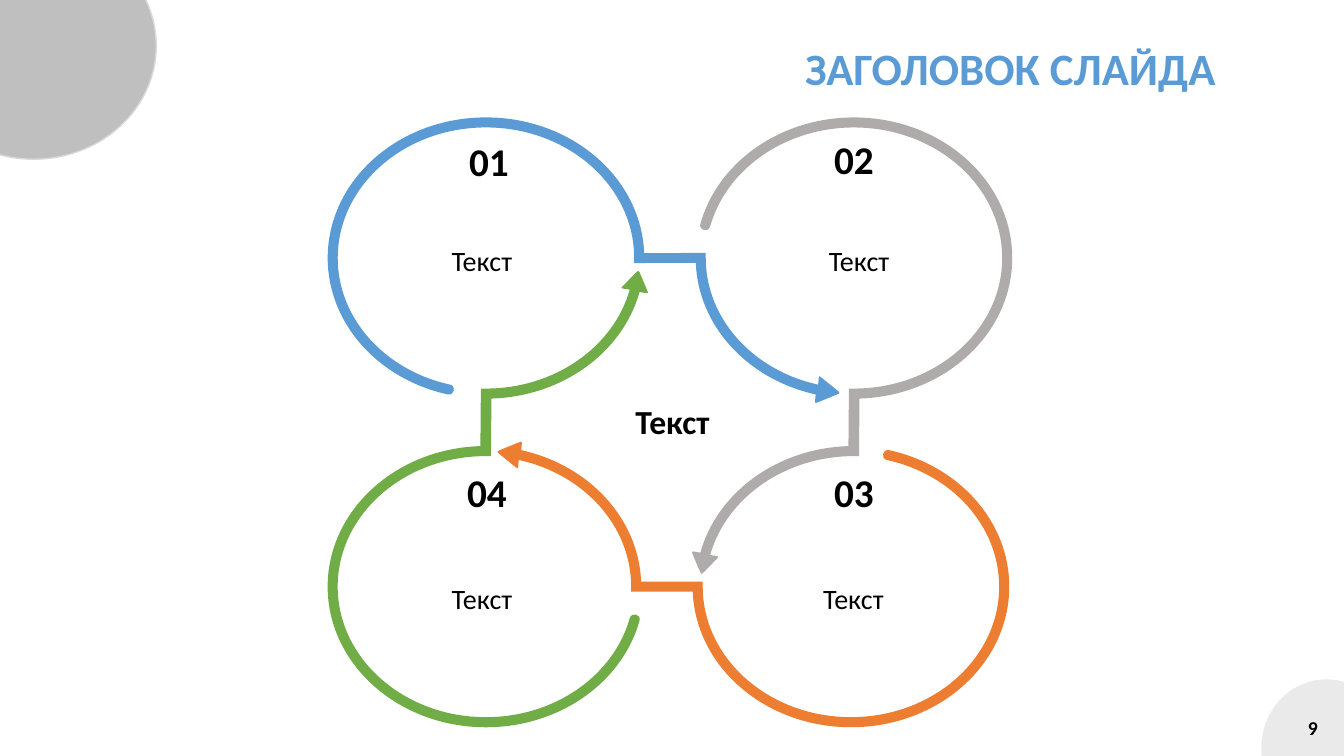
import math
import lxml.etree
import pptx
import pptx.dml.color
import pptx.enum.shapes
import pptx.enum.text
import pptx.oxml.ns
import pptx.util

Inches = pptx.util.Inches
Align = pptx.enum.text.PP_ALIGN
Anchor = pptx.enum.text.MSO_ANCHOR
Fit = pptx.enum.text.MSO_AUTO_SIZE
OVAL = pptx.enum.shapes.MSO_SHAPE.OVAL
qn = pptx.oxml.ns.qn

TITLE = "ЗАГОЛОВОК СЛАЙДА"
RINGS = [(4.82, 2.56), (8.47, 2.56), (8.47, 5.82), (4.82, 5.82)]
BANDS = [("5B9BD5", 0), ("AFABAB", 0), ("ED7D31", -0.03), ("70AD47", 0)]
RADII = (1.52, 1.345)
HALF = 0.05
WING = 0.14
NUMBERS = [
    ("01", (4.57, 1.31, 0.56, 0.57)),
    ("02", (8.19, 1.29, 0.56, 0.57)),
    ("04", (4.55, 4.59, 0.56, 0.57)),
    ("03", (8.19, 4.59, 0.56, 0.57)),
]
LABELS = [
    ("Текст", (3.36, 2.37, 2.84, 0.44), 20, False),
    ("Текст", (7.26, 2.37, 2.52, 0.44), 20, False),
    ("Текст", (4.89, 3.93, 3.56, 0.5), 24, True),
    ("Текст", (7.3, 5.72, 2.33, 0.44), 20, False),
    ("Текст", (3.29, 5.72, 2.98, 0.44), 20, False),
]
NUM_FRAME = {"margin_left": 0, "margin_right": 0, "vertical_anchor": Anchor.MIDDLE}
FIXED = {"vertical_anchor": Anchor.MIDDLE, "auto_size": Fit.NONE}


def rgb(code):
    return pptx.dml.color.RGBColor.from_string(code)


def assign(item, vals):
    for key, val in vals.items():
        setattr(item, key, val)


def paint(shape, code):
    shape.shadow.inherit = False
    shape.fill.solid()
    shape.fill.fore_color.rgb = rgb(code)
    shape.line.fill.background()


def write(shape, words, size, bold, align=Align.CENTER, code="000000", frame=None):
    box = shape.text_frame
    assign(box, {"word_wrap": True, "auto_size": Fit.SHAPE_TO_FIT_TEXT, **(frame or {})})
    line = box.paragraphs[0]
    line.alignment = align
    run = line.add_run()
    run.text = words
    assign(run.font, {"name": "Calibri", "size": pptx.util.Pt(size), "bold": bold})
    run.font.color.rgb = rgb(code)
    return line


def label(shapes, words, at, *args, **style):
    return write(shapes.add_textbox(*map(Inches, at)), words, *args, **style)


def disc(shapes, at, code):
    shape = shapes.add_shape(OVAL, *map(Inches, at))
    paint(shape, code)
    return shape


def spot(ring, deg, side=0):
    turn = math.radians(deg)
    return (ring[0] + (RADII[0] + side) * math.cos(turn),
            ring[1] + (RADII[1] + side) * math.sin(turn))


def slope(deg, side=0):
    turn = math.radians(deg)
    return (-(RADII[0] + side) * math.sin(turn), (RADII[1] + side) * math.cos(turn))


def shift(point, way, dist):
    return (point[0] + way[0] * dist, point[1] + way[1] * dist)


def unit(way):
    size = math.hypot(*way)
    return (way[0] / size, way[1] / size)


def arc(ring, side, *stops):
    curves = []
    for a, b in zip(stops, stops[1:]):
        pull = 4 / 3 * math.tan(math.radians(b - a) / 4)
        start, end = spot(ring, a, side), spot(ring, b, side)
        curves.append([shift(start, slope(a, side), pull),
                       shift(end, slope(b, side), -pull), end])
    return curves


def corner(ring, deg):
    return [shift(spot(ring, deg, -HALF), unit(slope(deg)), HALF)]


def mix(a, b, part):
    return (a[0] + (b[0] - a[0]) * part, a[1] + (b[1] - a[1]) * part)


def bend(before, point, after):
    return [[mix(point, before, 0.2)], [point, point, mix(point, after, 0.2)]]


def outline(ring, after, base):
    first, last, out, back = 104 + base, 104 + base, 360 + base, 180 + base
    tip, end = spot(after, 95 + base), spot(after, last)
    along = unit((tip[0] - end[0], tip[1] - end[1]))
    across = (along[1], -along[0])
    inner, outer = spot(after, last, -HALF), spot(after, last, HALF)
    near, far = shift(end, across, WING), shift(end, across, -WING)
    behind = unit(slope(first))
    begin = spot(ring, first, HALF)
    close = spot(ring, first, -HALF)
    pull = -HALF * 4 / 3
    parts = arc(ring, HALF, first, back, back + 90, out - 2)
    parts += [corner(after, back), [spot(after, back, -HALF)]]
    parts += arc(after, -HALF, back, last)
    parts += bend(inner, near, tip) + bend(near, tip, far) + bend(tip, far, outer)
    parts += [[outer]] + arc(after, HALF, last, back - 2)
    parts += [corner(ring, out), [spot(ring, out, -HALF)]]
    parts += arc(ring, -HALF, out, back + 90, back, first)
    parts.append([shift(close, behind, pull), shift(begin, behind, pull), begin])
    return begin, parts


def band(shapes, step):
    code, move = BANDS[step]
    ring, after = [shift(RINGS[i % 4], (1, 0), move) for i in (step, step + 1)]
    begin, parts = outline(ring, after, 90 * step)
    form = shapes.build_freeform(*map(Inches, begin))
    form.add_line_segments([tuple(map(Inches, part[-1])) for part in parts], close=True)
    shape = form.convert_to_shape()
    paint(shape, code)
    lines = list(shape._element.iter(qn("a:lnTo")))
    for line, part in zip(lines, parts):
        if len(part) == 3:
            curve = lxml.etree.Element(qn("a:cubicBezTo"))
            for x, y in part:
                lxml.etree.SubElement(curve, qn("a:pt"), x=str(Inches(x) - shape.left),
                                      y=str(Inches(y) - shape.top))
            line.getparent().replace(line, curve)


def main():
    deck = pptx.Presentation()
    assign(deck, {"slide_width": Inches(13.33), "slide_height": Inches(7.5)})
    slide = deck.slides.add_slide(deck.slide_layouts[5])
    shapes = slide.shapes

    pale = disc(shapes, (12.51, 6.74, 1.29, 1.36), "D9D9D9")
    tint = pale._element.spPr.find(".//" + qn("a:srgbClr"))
    lxml.etree.SubElement(tint, qn("a:alpha"), val="53000")
    label(shapes, "9", (10.17, 7.02, 3, 0.4), 14, True, align=Align.RIGHT, frame=FIXED)
    dark = disc(shapes, (-0.88, -0.67, 2.43, 2.25), "BFBFBF")
    dark.line.color.rgb = rgb("D9D9D9")
    dark.line.width = pptx.util.Pt(1)

    group = shapes.add_group_shape().shapes
    for step in range(len(BANDS)):
        band(group, step)
    for words, at in NUMBERS:
        label(group, words, at, 28, True, frame=NUM_FRAME)
    for words, at, size, bold in LABELS:
        label(shapes, words, at, size, bold)

    assign(shapes.title, {"left": Inches(4.14), "top": Inches(0.4),
                          "width": Inches(8.02), "height": Inches(0.65)})
    line = write(shapes.title, TITLE, 32, True, align=Align.RIGHT, code=BANDS[0][0],
                 frame=FIXED)
    line.line_spacing = 0.75
    deck.save("out.pptx")


if __name__ == "__main__":
    main()
